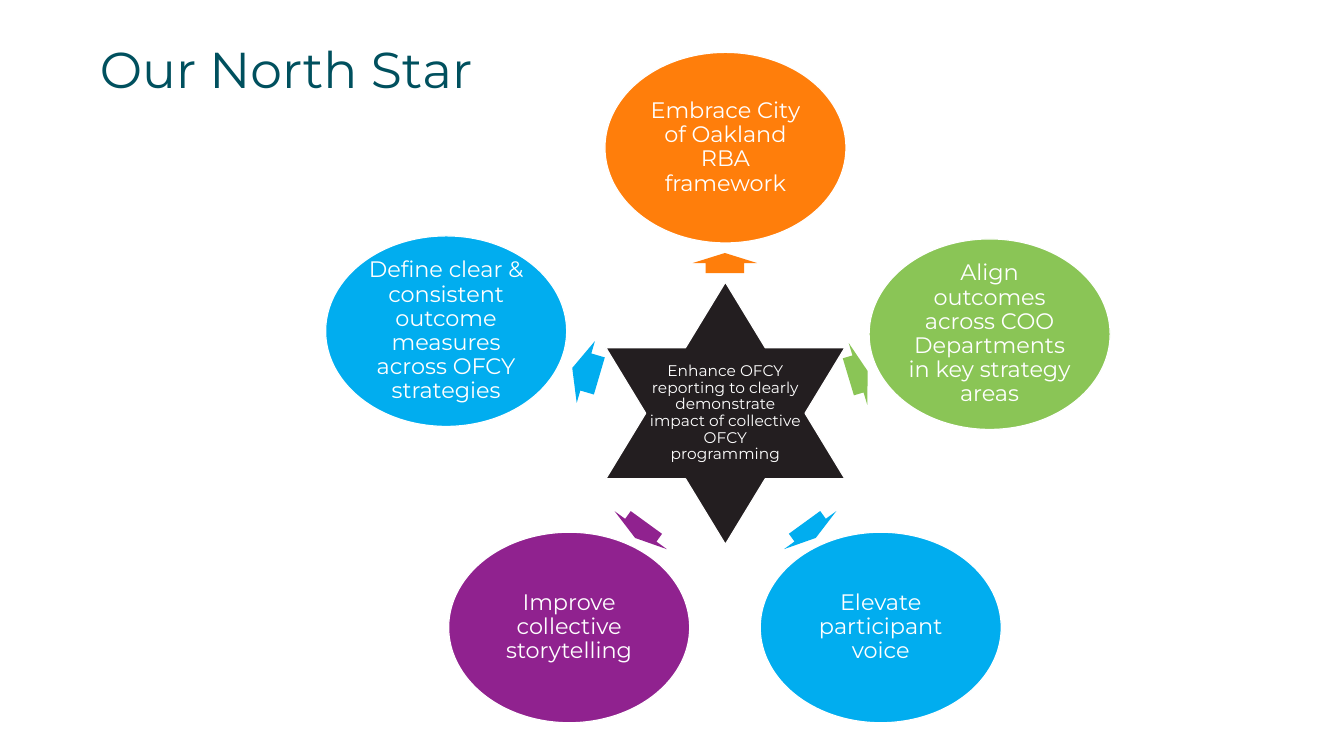
import pptx
import pptx.util
import pptx.dml.color
import pptx.enum.shapes
import pptx.enum.text

Inches, Pt = pptx.util.Inches, pptx.util.Pt
SHAPES = pptx.enum.shapes.MSO_SHAPE
ALIGN = pptx.enum.text.PP_ALIGN
ANCHOR = pptx.enum.text.MSO_ANCHOR
COLORS = {
    "teal": "00505E", "white": "FFFFFF", "black": "231E20", "orange": "FF7E0B",
    "green": "8AC556", "blue": "01ADEF", "purple": "90228F",
}


def add_filled(kind, left, top, width, height, color):
    shape = page.shapes.add_shape(
        kind, Inches(left), Inches(top), Inches(width), Inches(height))
    shape.shadow.inherit = False
    shape.fill.solid()
    shape.fill.fore_color.rgb = pptx.dml.color.RGBColor.from_string(COLORS[color])
    shape.line.fill.background()
    return shape


def add_label(shape, text, size):
    """Outline the shape in white and centre the text inside it."""
    white = pptx.dml.color.RGBColor.from_string(COLORS["white"])
    shape.line.color.rgb = white
    shape.line.width = Pt(0.85)
    frame = shape.text_frame
    frame.word_wrap = True
    frame.vertical_anchor = ANCHOR.MIDDLE
    frame.margin_left = frame.margin_right = Inches(0.02)
    frame.margin_top = frame.margin_bottom = Inches(0.02)
    para = frame.paragraphs[0]
    para.text = text
    para.alignment = ALIGN.CENTER
    para.line_spacing = 0.9
    para.font.name = "Montserrat"
    para.font.size = Pt(size)
    para.font.color.rgb = white


deck = pptx.Presentation()
deck.slide_width, deck.slide_height = Inches(13.33), Inches(7.5)
page = deck.slides.add_slide(deck.slide_layouts[5])

title = page.shapes.title
title.left, title.top = Inches(0.89), Inches(0.33)
title.width, title.height = Inches(11.11), Inches(0.71)
title.text_frame.vertical_anchor = ANCHOR.TOP
title.text_frame.auto_size = pptx.enum.text.MSO_AUTO_SIZE.NONE
heading = title.text_frame.paragraphs[0]
heading.text = "Our North Star"
heading.alignment = ALIGN.LEFT
heading.space_after = Pt(6)
heading.font.name = "Montserrat"
heading.font.size = Pt(36)
heading.font.color.rgb = pptx.dml.color.RGBColor.from_string(COLORS["teal"])

star = add_filled(SHAPES.STAR_6_POINT, 6.01, 2.8, 2.37, 2.6, "black")
add_label(star, "Enhance OFCY reporting to clearly demonstrate impact of "
                "collective OFCY programming", 11)

# text, colour, ellipse left and top, arrow left, top, width and rotation
goals = [
    ("Embrace City of Oakland RBA framework", "orange",
     (6, 0.52), (7.09, 2.29, 0.2, 270)),
    ("Align outcomes across COO Departments in key strategy areas", "green",
     (8.62, 2.37), (8.41, 3.39, 0.2, 343.3)),
    ("Elevate participant voice", "blue",
     (7.54, 5.28), (7.94, 4.94, 0.19, 54)),
    ("Improve collective storytelling", "purple",
     (4.45, 5.28), (6.26, 4.94, 0.19, 126)),
    ("Define clear & consistent outcome measures across OFCY strategies", "blue",
     (3.23, 2.34), (5.67, 3.37, 0.28, 196.4)),
]
for text, color, (left, top), (arrow_left, arrow_top, length, rotation) in goals:
    arrow = add_filled(SHAPES.RIGHT_ARROW, arrow_left, arrow_top, length, 0.64, color)
    arrow.adjustments[0] = 0.6
    arrow.adjustments[1] = 0.5
    arrow.rotation = rotation
    ellipse = add_filled(SHAPES.OVAL, left, top, 2.39, 1.89, color)
    add_label(ellipse, text, 16)

deck.save("out.pptx")
